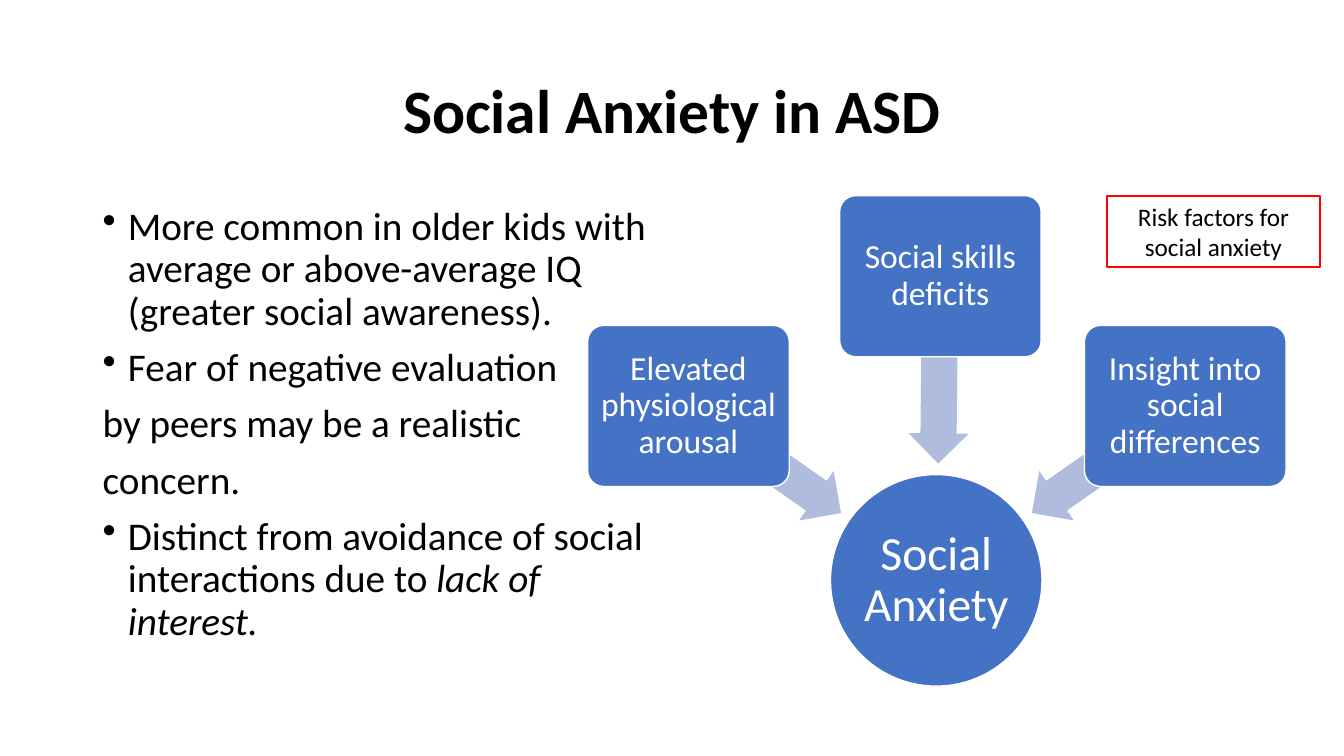
from pptx import Presentation
from pptx.dml.color import RGBColor
from pptx.enum.shapes import MSO_SHAPE as Preset
from pptx.enum.text import MSO_ANCHOR as Anchor, PP_ALIGN as Align
from pptx.oxml.xmlchemy import OxmlElement
from pptx.util import Cm, Pt

COLORS = {"text": "000000", "node": "4472C4", "arrow": "B0BCDE",
          "white": "FFFFFF", "label_border": "FF0000"}
FONT = "Calibri"
FACTOR_SIZE = (5.08, 4.06)
CIRCLE = 5.33
ARROW_HEIGHT = 1.52
POINTS = [
    (True, [("More common in older kids with average or above-average IQ "
             "(greater social awareness).", False)]),
    (True, [("Fear of negative evaluation", False)]),
    (False, [("by peers may be a realistic", False)]),
    (False, [("concern.", False)]),
    (True, [("Distinct from avoidance of social interactions due to ", False),
            ("lack of interest.", True)]),
]
FACTORS = [
    ("Elevated physiological arousal", (0, 3.27), (2.11, 5.89, 4.7), 215),
    ("Social skills deficits", (6.35, 0), (6.5, 3.63, 4.72), 270.6),
    ("Insight into social differences", (12.52, 3.27), (10.77, 5.89, 4.7), 325),
]


def rgb(name):
    """Return the named colour."""
    return RGBColor.from_string(COLORS[name])


def add_run(paragraph, text, size, color="text", bold=False, italic=False):
    """Append one formatted run to a paragraph."""
    run = paragraph.add_run()
    run.text = text
    font = run.font
    font.name, font.size = FONT, Pt(size)
    font.bold, font.italic = bold, italic
    font.color.rgb = rgb(color)


def add_bullet(paragraph):
    """Give a paragraph a hanging bullet."""
    properties = paragraph._p.get_or_add_pPr()
    properties.set("marL", str(Cm(0.635)))
    properties.set("indent", str(-Cm(0.635)))
    bullet = OxmlElement("a:buChar")
    bullet.set("char", "•")
    properties.append(bullet)


def add_text_frame(slide, box):
    """Place a wrapping text box and return its frame."""
    frame = slide.shapes.add_textbox(*map(Cm, box)).text_frame
    frame.word_wrap = True
    return frame


def add_preset(slide, preset, box, fill=None, border=None, width=1):
    """Place a flat preset shape with the given fill and border."""
    shape = slide.shapes.add_shape(preset, *map(Cm, box))
    shape.shadow.inherit = False
    if fill:
        shape.fill.solid()
        shape.fill.fore_color.rgb = rgb(fill)
    else:
        shape.fill.background()
    if border:
        shape.line.color.rgb = rgb(border)
        shape.line.width = Pt(width)
    else:
        shape.line.fill.background()
    return shape


def write_centred(frame, text, size, color="text", bold=False, spacing=0.9):
    """Write one paragraph in the middle of a frame."""
    frame.word_wrap = True
    frame.vertical_anchor = Anchor.MIDDLE
    paragraph = frame.paragraphs[0]
    paragraph.alignment = Align.CENTER
    paragraph.line_spacing = spacing
    add_run(paragraph, text, size, color, bold)


def add_node(slide, preset, box, text, size, inset):
    """Place a filled diagram node with its caption."""
    node = add_preset(slide, preset, box, "node", "white")
    frame = node.text_frame
    frame.margin_left = frame.margin_right = Cm(inset)
    frame.margin_top = frame.margin_bottom = Cm(inset)
    write_centred(frame, text, size, "white")
    return node


def add_title(slide, box):
    """Place the slide title."""
    write_centred(add_text_frame(slide, box), "Social Anxiety in ASD", 44, bold=True)


def add_points(slide, box):
    """Place the list of points."""
    frame = add_text_frame(slide, box)
    for index, (bulleted, runs) in enumerate(POINTS):
        point = frame.add_paragraph() if index else frame.paragraphs[0]
        point.line_spacing = 0.9
        point.space_before = Pt(10)
        if bulleted:
            add_bullet(point)
        for text, italic in runs:
            add_run(point, text, 28, italic=italic)


def add_diagram(slide, box):
    """Place the circle and the risk factors that converge on it."""
    left, top, _, height = box
    circle_box = (left + 6.12, top + height - CIRCLE, CIRCLE, CIRCLE)
    add_node(slide, Preset.OVAL, circle_box, "Social Anxiety", 34, 0.05)
    for text, (x, y), (arrow_x, arrow_y, length), angle in FACTORS:
        arrow_box = (left + arrow_x, top + arrow_y, length, ARROW_HEIGHT)
        arrow = add_preset(slide, Preset.LEFT_ARROW, arrow_box, "arrow")
        arrow.adjustments[0], arrow.adjustments[1] = 0.6, 0.5
        arrow.rotation = angle
        factor = add_node(slide, Preset.ROUNDED_RECTANGLE,
                          (left + x, top + y, *FACTOR_SIZE), text, 24, 0.13)
        factor.adjustments[0] = 0.1


def add_label(slide, box):
    """Place the outlined diagram label."""
    label = add_preset(slide, Preset.RECTANGLE, box, border="label_border", width=1.5)
    write_centred(label.text_frame, "Risk factors for social anxiety", 18, spacing=1.0)


def main():
    """Build and save the slide."""
    deck = Presentation()
    deck.slide_width, deck.slide_height = Cm(33.87), Cm(19.05)
    slide = deck.slides.add_slide(deck.slide_layouts[6])
    add_title(slide, (2.34, 1.02, 29.21, 3.68))
    add_points(slide, (2.34, 5.08, 14.4, 12.09))
    add_diagram(slide, (14.81, 4.93, 17.6, 12.36))
    add_label(slide, (27.89, 4.93, 5.38, 1.8))
    deck.save("out.pptx")


if __name__ == "__main__":
    main()
